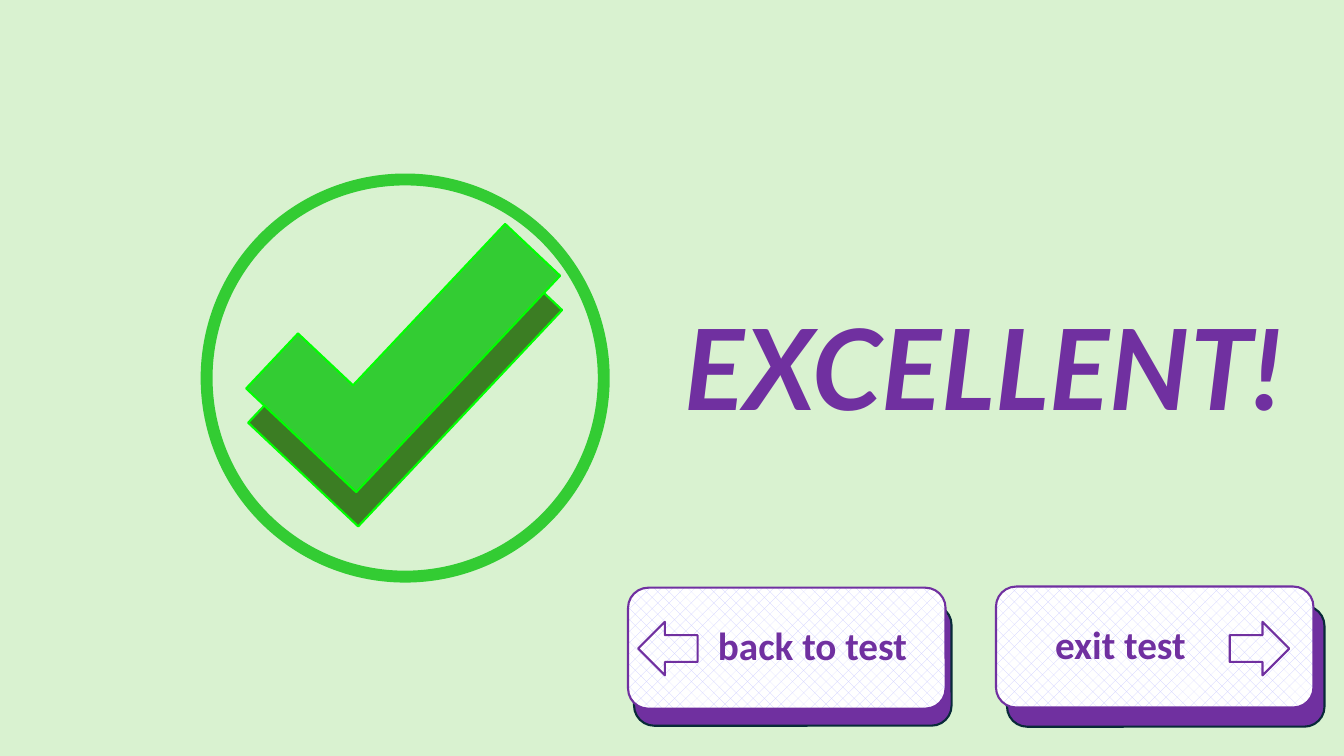
import pptx
import pptx.util
import pptx.dml.color
import pptx.enum.dml
import pptx.enum.shapes
import pptx.enum.text

Pt = pptx.util.Pt
Kind = pptx.enum.shapes.MSO_SHAPE
Align = pptx.enum.text.PP_ALIGN
Anchor = pptx.enum.text.MSO_ANCHOR
PURPLE, GREEN = "7030A0", "33CC33"


def color(code):
    return pptx.dml.color.RGBColor.from_string(code)


def draw(kind, left, top, width, height, fill, line, weight=1.5):
    shape = slide.shapes.add_shape(kind, Pt(left), Pt(top), Pt(width), Pt(height))
    shape.shadow.inherit = False
    if fill:
        shape.fill.solid()
        shape.fill.fore_color.rgb = color(fill)
    else:
        shape.fill.background()
    shape.line.color.rgb = color(line)
    shape.line.width = Pt(weight)
    return shape


deck = pptx.Presentation()
deck.slide_width, deck.slide_height = Pt(960), Pt(540)
slide = deck.slides.add_slide(deck.slide_layouts[6])
slide.background.fill.solid()
slide.background.fill.fore_color.rgb = color("D9F2D0")

# Ring
draw(Kind.FLOWCHART_CONNECTOR, 147.6, 128.2, 283.7, 283.7, None, GREEN, 8.5)

# Check mark: dark shade below, bright mark above
for left, top, fill in [(235.4, 155.5, "3B7D23"), (234, 131, GREEN)]:
    mark = draw(Kind.CORNER, left, top, 108, 212.4, fill, "00FF00")
    mark.rotation = 43.3
    mark._element.spPr.xfrm.set("flipH", "1")

# Praise
box = slide.shapes.add_textbox(Pt(470.9), Pt(209.5), Pt(463.7), Pt(104.4))
box.text_frame.word_wrap = False
para = box.text_frame.paragraphs[0]
para.text = "EXCELLENT!"
para.alignment = Align.CENTER
font = para.runs[0].font
font.name, font.size = "Lato", Pt(80)
font.bold = font.italic = True
font.color.rgb = color(PURPLE)

# Buttons: label, face corner, base corner, text inset, arrow
buttons = [
    ("back to test", (448.6, 419.8), (452.9, 432), 60, Kind.LEFT_ARROW, 455.8),
    ("exit test", (711.4, 419), (719.3, 432.7), 38, Kind.RIGHT_ARROW, 878.4),
]
for label, front, back, inset, arrow, spot in buttons:
    draw(Kind.ROUNDED_RECTANGLE, *back, 226.8, 86.4, PURPLE, "092A39")
    face = draw(Kind.ROUNDED_RECTANGLE, *front, 226.8, 86.4, None, PURPLE)
    face.fill.patterned()
    face.fill.pattern = pptx.enum.dml.MSO_PATTERN.PERCENT_25
    face.fill.fore_color.rgb = color("CCCCFF")
    face.fill.back_color.rgb = color("FFFFFF")

    frame = face.text_frame
    frame.margin_left = Pt(inset)
    frame.vertical_anchor = Anchor.MIDDLE
    para = frame.paragraphs[0]
    para.text = label
    para.alignment = Align.LEFT
    para.line_spacing = 0.9
    para.space_before = Pt(10)
    font = para.runs[0].font
    font.name, font.size, font.bold = "Calibri", Pt(28), True
    font.color.rgb = color(PURPLE)

    draw(arrow, spot, 444.2, 42.5, 38.2, None, PURPLE)

deck.save("out.pptx")
